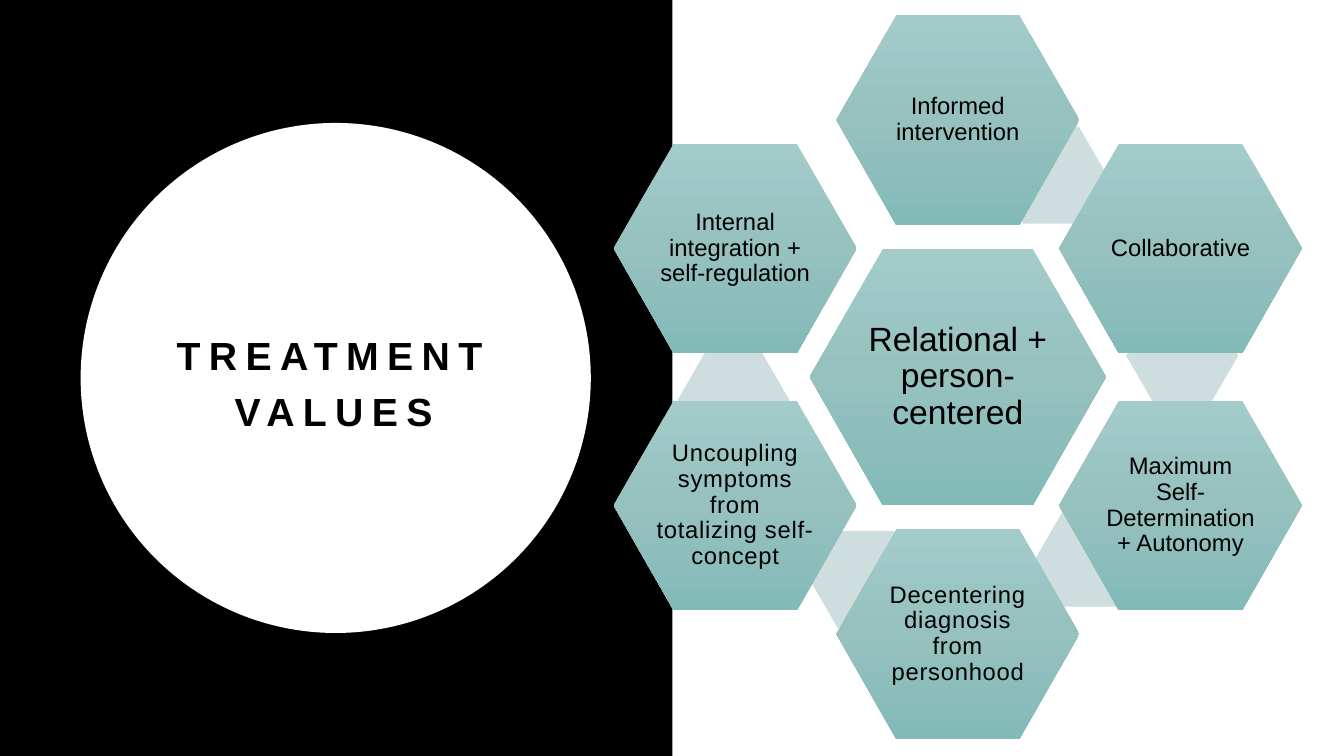
import copy
import math
import pptx
import pptx.util
import pptx.oxml.ns
from pptx.dml.color import RGBColor
from pptx.enum.shapes import MSO_SHAPE
from pptx.enum.text import MSO_ANCHOR, PP_ALIGN
from pptx.util import Inches

BLACK = RGBColor(0x00, 0x00, 0x00)
WHITE = RGBColor(0xFF, 0xFF, 0xFF)
PALE = RGBColor(0xCE, 0xDD, 0xDD)
TEALS = [RGBColor(0xA2, 0xCB, 0xCA), RGBColor(0x96, 0xC1, 0xBF),
         RGBColor(0x82, 0xBA, 0xB8)]

# Middle of the ring and distance to the outer cells
MID_X, MID_Y, REACH = 9.5, 3.74, 2.55

# Outer cells clockwise from the top: text, letter spacing in points
VALUES = [
    ("Informed intervention", 0),
    ("Collaborative", 0),
    ("Maximum Self-Determination + Autonomy", 0),
    ("Decentering diagnosis from personhood", 0.5),
    ("Uncoupling symptoms from totalizing self-concept", 0.5),
    ("Internal integration + self-regulation", 0),
]

# Left and top of the pale links between cells
LINKS = [(9.87, 1.26), (11.17, 3.05), (10.27, 5.06), (8.03, 5.27), (6.72, 3.49)]


def add_form(slide, kind, left, top, width, height, fill=None):
    form = slide.shapes.add_shape(kind, Inches(left), Inches(top),
                                  Inches(width), Inches(height))
    form.shadow.inherit = False
    form.line.fill.background()
    if fill is not None:
        form.fill.solid()
        form.fill.fore_color.rgb = fill
    return form


def add_text(slide, text, left, top, width, height, size=17, bold=False,
             space=0, lead=0.9, inset=0.02):
    box = slide.shapes.add_textbox(Inches(left), Inches(top),
                                   Inches(width), Inches(height))
    frame = box.text_frame
    frame.word_wrap = True
    frame.vertical_anchor = MSO_ANCHOR.MIDDLE
    frame.margin_left = frame.margin_right = Inches(inset)
    frame.margin_top = frame.margin_bottom = Inches(inset)
    para = frame.paragraphs[0]
    para.alignment = PP_ALIGN.CENTER
    para.line_spacing = lead
    run = para.add_run()
    run.text = text
    run.font.name = "Arial"
    run.font.size = pptx.util.Pt(size)
    run.font.bold = bold
    run.font.color.rgb = BLACK
    if space:
        run.font._element.set("spc", str(int(space * 100)))


def shade(form):
    """Fill from light at the top to dark at the bottom, in three stops."""
    form.fill.gradient()
    form.fill.gradient_angle = 270
    stops = form._element.spPr.find(".//" + pptx.oxml.ns.qn("a:gsLst"))
    stops.insert(1, copy.deepcopy(stops[0]))
    for place, (stop, color) in enumerate(zip(form.fill.gradient_stops, TEALS)):
        stop.position = place / 2
        stop.color.rgb = color


def add_cell(slide, text, mid_x, mid_y, width, height, **style):
    form = add_form(slide, MSO_SHAPE.HEXAGON, mid_x - width / 2,
                    mid_y - height / 2, width, height)
    form.adjustments[0] = 0.286
    shade(form)
    # The text fills the middle two thirds of the cell
    wide, high = width * 0.67, height * 0.67
    add_text(slide, text, mid_x - wide / 2, mid_y - high / 2, wide, high, **style)


def main():
    deck = pptx.Presentation()
    deck.slide_width, deck.slide_height = Inches(13.33), Inches(7.5)
    slide = deck.slides.add_slide(deck.slide_layouts[6])

    # Title panel
    add_form(slide, MSO_SHAPE.RECTANGLE, 0, 0, 6.67, 7.5, BLACK)
    add_form(slide, MSO_SHAPE.OVAL, 0.8, 1.22, 5.06, 5.06, WHITE)
    add_text(slide, "TREATMENT VALUES", 1.14, 2.5, 4.34, 2.5, size=28,
             bold=True, space=6, lead=1.2, inset=0.1)

    # Pale links behind the ring
    for left, top in LINKS:
        link = add_form(slide, MSO_SHAPE.HEXAGON, left, top, 1.11, 0.96, PALE)
        link.adjustments[0] = 0.289

    # Central cell and the ring around it
    add_cell(slide, "Relational + person-centered", MID_X, MID_Y, 2.94, 2.54,
             size=24, inset=0.03)
    for turn, (text, space) in enumerate(VALUES):
        angle = math.radians(60 * turn)
        add_cell(slide, text, MID_X + REACH * math.sin(angle),
                 MID_Y - REACH * math.cos(angle), 2.41, 2.08, space=space)

    deck.save("out.pptx")


if __name__ == "__main__":
    main()
